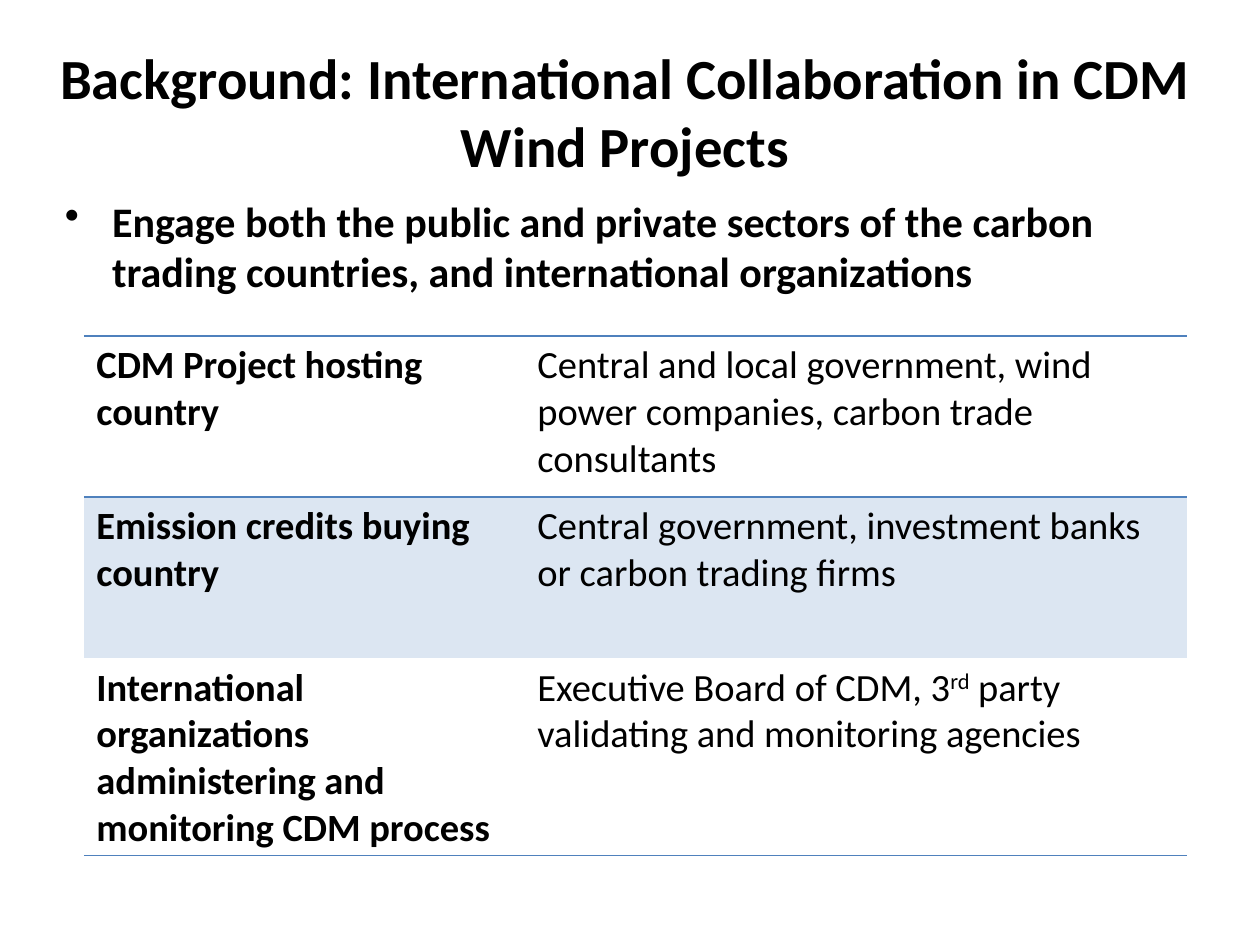
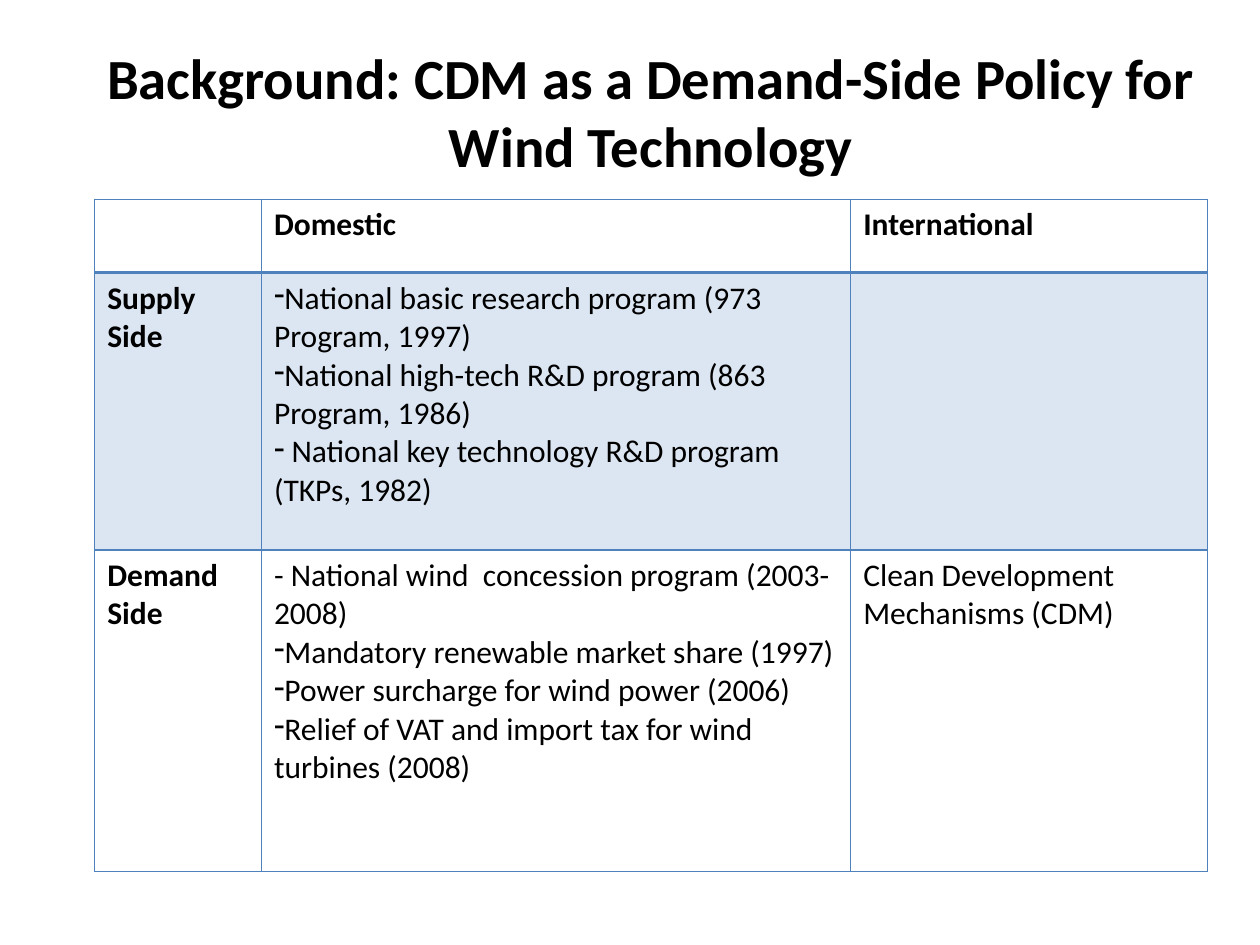
from lxml import etree
from pptx import Presentation
from pptx import util as u
from pptx.dml.color import RGBColor
from pptx.enum import text
from pptx.oxml.ns import qn

COLORS = {"text": "000000", "rule": "4F81BD", "band": "DCE6F2"}
FONT = "Calibri"
SUPERSCRIPT = "30000"

ACTORS = [
    ["CDM Project hosting country",
     "Central and local government, wind power companies, carbon trade consultants"],
    ["Emission credits buying country",
     "Central government, investment banks or carbon trading firms"],
    ["International organizations administering and monitoring CDM process",
     ("Executive Board of CDM, 3", "rd", " party validating and monitoring agencies")],
]
POLICIES = [
    ["", "Domestic", "International"],
    ["Supply Side",
     ["•National basic research program (973 Program, 1997)",
      "•National high-tech R&D program (863 Program, 1986)",
      "• National key technology R&D program (TKPs, 1982)"],
     ""],
    ["Demand Side",
     ["- National wind  concession program (2003-2008)",
      "•Mandatory renewable market share (1997)",
      "•Power surcharge for wind power (2006)",
      "•Relief of VAT and import tax for wind turbines (2008)"],
     "Clean Development Mechanisms (CDM)"],
]


def rgb(name):
    """Return the named colour."""
    return RGBColor.from_string(COLORS[name])


def style(p, size, bold=False):
    """Set the font of a whole paragraph."""
    p.font.name = FONT
    p.font.size = u.Pt(size)
    p.font.bold = bold
    p.font.color.rgb = rgb("text")


def add_bullet(p, char, indent=0):
    """Give a paragraph a bullet with a hanging indent."""
    pPr = p._p.get_or_add_pPr()
    pPr.set("marL", str(int(indent)))
    pPr.set("indent", str(-int(indent)))
    bullet = etree.Element(qn("a:buChar"), char=char)
    pPr.insert(0, bullet)


def add_text(slide, left, top, width, height):
    """Add a wrapping text box and return its text frame."""
    tf = slide.shapes.add_textbox(*map(u.Cm, (left, top, width, height))).text_frame
    tf.word_wrap = True
    return tf


def add_title(slide, title, left, width):
    """Add the centred slide title."""
    tf = add_text(slide, left, 0.64, width, 3.18)
    tf.vertical_anchor = text.MSO_ANCHOR.MIDDLE
    p = tf.paragraphs[0]
    p.text = title
    p.alignment = text.PP_ALIGN.CENTER
    style(p, 32.4, True)


def add_point(slide, point):
    """Add the bulleted statement under the title."""
    tf = add_text(slide, 1.06, 2.54, 23.7, 16.08)
    tf.margin_top = u.Cm(1.4)
    p = tf.paragraphs[0]
    p.text = point
    style(p, 24, True)
    add_bullet(p, "•", u.Cm(0.95))


def set_borders(cell, widths):
    """Draw the cell edges, keyed by side; a width of zero hides the edge."""
    tcPr = cell._tc.get_or_add_tcPr()
    for side, width in widths.items():
        ln = etree.SubElement(tcPr, qn(f"a:ln{side}"), w=str(int(u.Pt(width))))
        if width:
            fill = etree.SubElement(ln, qn("a:solidFill"))
            etree.SubElement(fill, qn("a:srgbClr"), val=COLORS["rule"])
        else:
            etree.SubElement(ln, qn("a:noFill"))


def fill_cell(cell, content, size, bold):
    """Write a string, a list of lines or a (base, superscript, rest) tuple."""
    tf = cell.text_frame
    lines = content if isinstance(content, list) else [content]
    for i, line in enumerate(lines):
        p = tf.add_paragraph() if i else tf.paragraphs[0]
        if isinstance(line, tuple):
            for part in line:
                p.add_run().text = part
            p.runs[1]._r.get_or_add_rPr().set("baseline", SUPERSCRIPT)
        elif line:
            p.text = line.removeprefix("•")
        style(p, size, bold)
        if isinstance(line, str) and line.startswith("•"):
            add_bullet(p, "-")


def add_grid(slide, left, top, cols, heights, rows, size, rules, side_rule=0, header=False):
    """Add a table with a shaded middle row; rules are the horizontal line widths."""
    frame = slide.shapes.add_table(len(rows), len(cols), u.Cm(left), u.Cm(top),
                                   u.Cm(sum(cols)), u.Cm(sum(heights)))
    table = frame.table
    table.first_row = table.horz_banding = False
    for column, width in zip(table.columns, cols):
        column.width = u.Cm(width)
    for i, (row, height) in enumerate(zip(rows, heights)):
        table.rows[i].height = u.Cm(height)
        for j, content in enumerate(row):
            cell = table.cell(i, j)
            fill_cell(cell, content, size, j == 0 or (header and i == 0))
            set_borders(cell, {"L": side_rule, "R": side_rule,
                               "T": rules[i], "B": rules[i + 1]})
            if i == 1:
                cell.fill.solid()
                cell.fill.fore_color.rgb = rgb("band")
            else:
                cell.fill.background()


def add_collaboration(slide):
    """Build the slide on who takes part in CDM wind projects."""
    add_title(slide, "Background: International Collaboration in CDM Wind Projects", 0.64, 23.92)
    add_point(slide, "Engage both the public and private sectors of the carbon "
                     "trading countries, and international organizations")
    add_grid(slide, 1.69, 6.77, (8.89, 13.34), (3.25, 3.25, 3.66), ACTORS, 22,
             rules=(1, 1, 0, 1))


def add_policy(slide):
    """Build the slide on supply-side and demand-side policies."""
    add_title(slide, "Background: CDM as a Demand-Side Policy for Wind Technology", 1.69, 22.86)
    add_grid(slide, 1.91, 4.02, (3.36, 11.88, 7.19), (1.48, 5.59, 6.48), POLICIES, 18,
             rules=(1, 2, 1, 1), side_rule=1, header=True)


def main():
    """Build and save the presentation."""
    prs = Presentation()
    prs.slide_width, prs.slide_height = u.Cm(25.4), u.Cm(19.05)
    for build in (add_collaboration, add_policy):
        build(prs.slides.add_slide(prs.slide_layouts[6]))
    prs.save("out.pptx")


if __name__ == "__main__":
    main()
